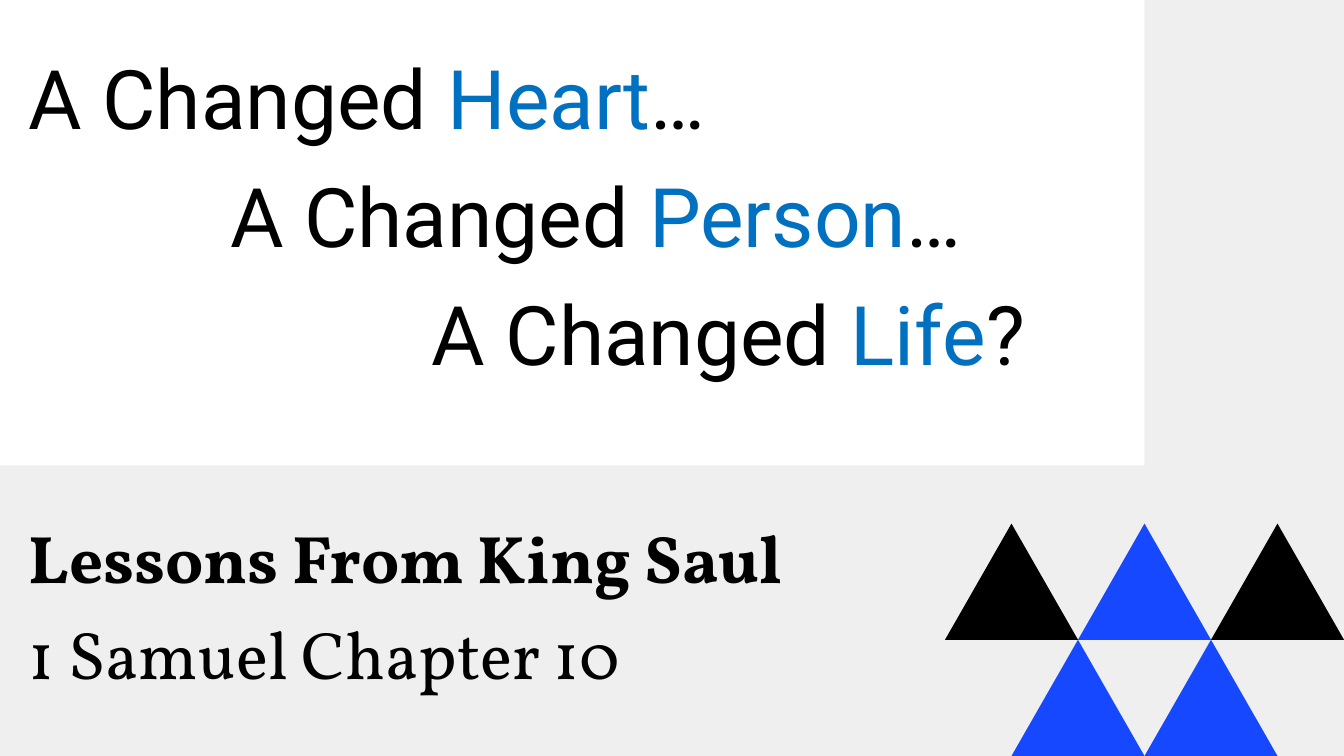
from typing import NamedTuple

from pptx import Presentation
from pptx.dml.color import RGBColor
from pptx.enum.shapes import MSO_SHAPE
from pptx.enum.text import MSO_ANCHOR
from pptx.util import Emu, Pt

RECTANGLE = MSO_SHAPE.RECTANGLE
TRIANGLE = MSO_SHAPE.ISOSCELES_TRIANGLE
TOP = MSO_ANCHOR.TOP

EMU_PER_PX = 9525
BLACK, WHITE, GREY = "000000", "FFFFFF", "EFEFEF"
BRIGHT_BLUE, WORD_BLUE = "1649FF", "0070C0"

INDENT_STEP = 288
TRIANGLE_WIDTH, TRIANGLE_HEIGHT = 190, 166
TRIANGLES_LEFT, TRIANGLES_TOP = 1350, 748


class Phrase(NamedTuple):
    start: str
    keyword: str
    end: str


class Triangle(NamedTuple):
    half_steps: int
    row: int
    color: str


PHRASES = [
    Phrase("A Changed ", "Heart", "…"),
    Phrase("A Changed ", "Person", "…"),
    Phrase("A Changed ", "Life", "?"),
]

TRIANGLES = [
    Triangle(0, 0, BLACK),
    Triangle(2, 0, BRIGHT_BLUE),
    Triangle(1, 1, BRIGHT_BLUE),
    Triangle(3, 1, BRIGHT_BLUE),
    Triangle(4, 0, BLACK),
]


def px(length: int) -> Emu:
    return Emu(length * EMU_PER_PX)


def rgb(color: str) -> RGBColor:
    return RGBColor.from_string(color)


def add_filled_shape(slide, kind, left: int, top: int, width: int, height: int, color: str) -> None:
    shape = slide.shapes.add_shape(kind, px(left), px(top), px(width), px(height))
    shape.shadow.inherit = False
    shape.fill.solid()
    shape.fill.fore_color.rgb = rgb(color)
    shape.line.fill.background()


def add_triangle(slide, triangle: Triangle) -> None:
    left = TRIANGLES_LEFT + triangle.half_steps * TRIANGLE_WIDTH // 2
    top = TRIANGLES_TOP + triangle.row * TRIANGLE_HEIGHT
    add_filled_shape(slide, TRIANGLE, left, top, TRIANGLE_WIDTH, TRIANGLE_HEIGHT, triangle.color)


def add_span(para, text: str, *, font: str = "Roboto", size: int = 88,
             color: str = BLACK, bold: bool = False) -> None:
    span = para.add_run()
    span.text = text
    span.font.name = font
    span.font.size = Pt(size)
    span.font.bold = bold
    span.font.color.rgb = rgb(color)


def add_para(frame, *, indent: int = 0, space_before: int = 0):
    """Add a paragraph, using the frame's first one while it is still empty."""
    first = frame.paragraphs[0]
    para = frame.add_paragraph() if first.runs else first
    para.line_spacing = 1.2
    para.space_before = Pt(space_before)
    properties = para._p.get_or_add_pPr()
    properties.set("marL", str(px(indent)))
    properties.set("indent", "0")
    return para


def add_title_text(slide) -> None:
    box = slide.shapes.add_textbox(px(41), px(39), px(1879), px(989))
    frame = box.text_frame
    frame.word_wrap = True
    frame.vertical_anchor = TOP
    frame.margin_left = frame.margin_top = frame.margin_right = frame.margin_bottom = 0

    for step, phrase in enumerate(PHRASES):
        para = add_para(frame, indent=step * INDENT_STEP)
        add_span(para, phrase.start)
        add_span(para, phrase.keyword, color=WORD_BLUE)
        add_span(para, phrase.end)

    heading = add_para(frame, space_before=126)
    add_span(heading, "Lessons From King Saul", font="Vollkorn", size=72, bold=True)
    chapter = add_para(frame)
    add_span(chapter, "1 Samuel Chapter 10", font="Vollkorn", size=72)


def main() -> None:
    deck = Presentation()
    deck.slide_width, deck.slide_height = px(1920), px(1080)
    slide = deck.slides.add_slide(deck.slide_layouts[6])
    slide.background.fill.solid()
    slide.background.fill.fore_color.rgb = rgb(GREY)

    add_filled_shape(slide, RECTANGLE, -322, -97, 1957, 762, WHITE)
    for triangle in TRIANGLES:
        add_triangle(slide, triangle)
    add_title_text(slide)
    deck.save("out.pptx")


if __name__ == "__main__":
    main()
